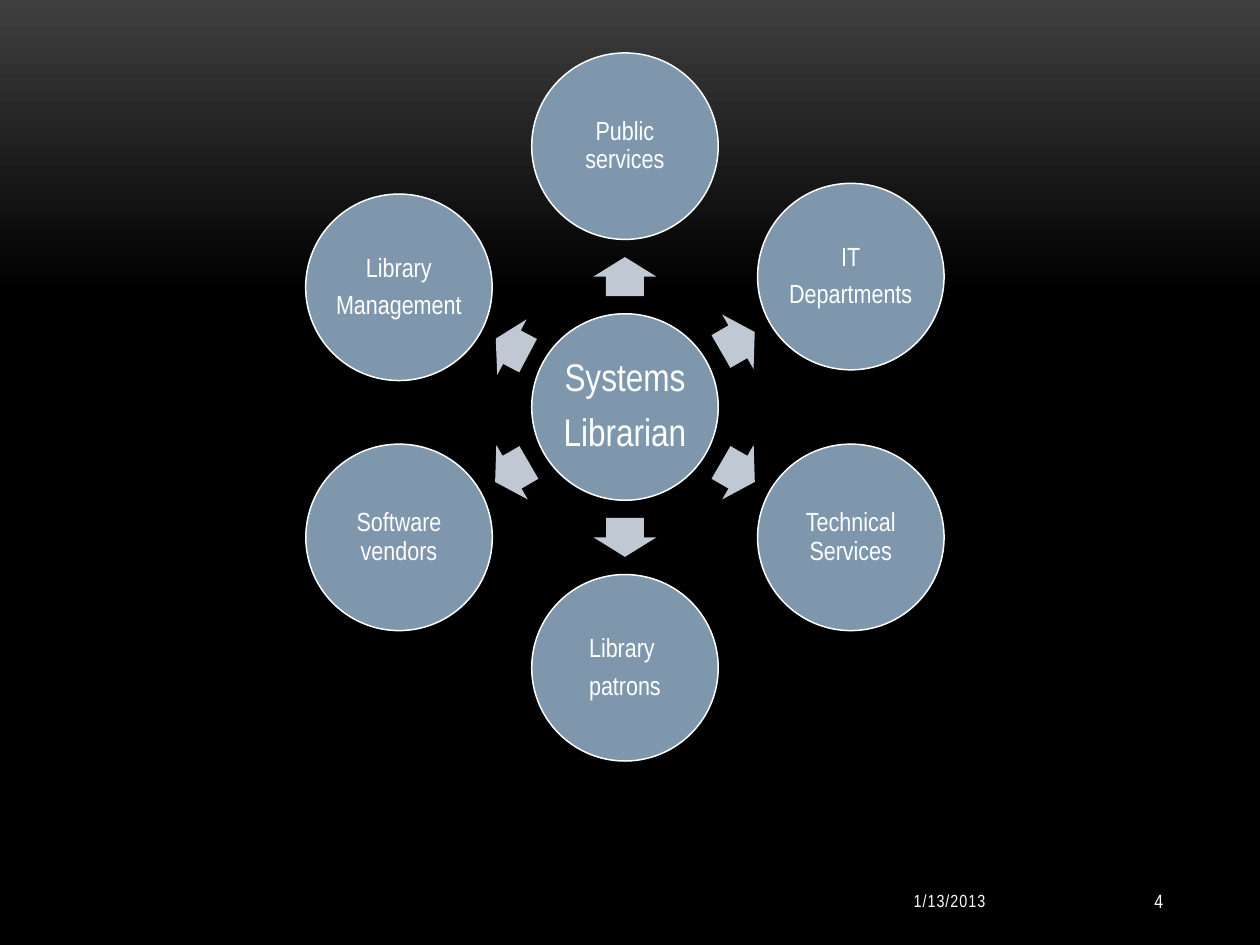
import math

import pptx
import pptx.dml.color
import pptx.enum.shapes
import pptx.enum.text
import pptx.util

Inches = pptx.util.Inches
Pt = pptx.util.Pt
RGBColor = pptx.dml.color.RGBColor
SHAPE = pptx.enum.shapes.MSO_SHAPE
ALIGN = pptx.enum.text.PP_ALIGN

WHITE = RGBColor(0xFF, 0xFF, 0xFF)
BLACK = RGBColor(0x00, 0x00, 0x00)
CHARCOAL = RGBColor(0x3F, 0x3F, 0x3F)
STEEL = RGBColor(0x7E, 0x97, 0xAD)
PALE_STEEL = RGBColor(0xC0, 0xC9, 0xD3)
FONT = "Arial Narrow"

CENTER_X, CENTER_Y = 4.96, 3.23
DIAMETER = 1.48
ARROW_HEIGHT = 0.5

# Lines of text, clockwise angle from the right, distance, arrow length
PARTNERS = [
    (["Public services"], 270, 2.07, 0.31),
    (["IT", "Departments"], 330, 2.07, 0.31),
    (["Technical Services"], 30, 2.07, 0.31),
    (["Library ", "patrons"], 90, 2.07, 0.31),
    (["Software vendors"], 150, 2.07, 0.31),
    (["Library", "Management"], 207.9, 2.03, 0.29),
]


def set_background(slide):
    fill = slide.background.fill
    fill.gradient()
    fill.gradient_angle = 270
    for stop, color, position in zip(fill.gradient_stops, (CHARCOAL, BLACK), (0, 0.31)):
        stop.color.rgb = color
        stop.position = position


def add_run(paragraph, text, size):
    run = paragraph.add_run()
    run.text = text
    run.font.name = FONT
    run.font.size = Pt(size)
    run.font.color.rgb = WHITE
    return run


def add_centered_shape(slide, kind, x, y, width, height, color):
    shape = slide.shapes.add_shape(
        kind, Inches(x - width / 2), Inches(y - height / 2), Inches(width), Inches(height)
    )
    shape.shadow.inherit = False
    shape.fill.solid()
    shape.fill.fore_color.rgb = color
    return shape


def add_circle(slide, x, y, lines, size, inset):
    circle = add_centered_shape(slide, SHAPE.OVAL, x, y, DIAMETER, DIAMETER, STEEL)
    circle.line.color.rgb = WHITE
    circle.line.width = Pt(0.85)
    frame = circle.text_frame
    frame.word_wrap = True
    frame.vertical_anchor = pptx.enum.text.MSO_ANCHOR.MIDDLE
    frame.margin_left = frame.margin_right = Inches(inset)
    frame.margin_top = frame.margin_bottom = Inches(inset)
    for index, line in enumerate(lines):
        paragraph = frame.add_paragraph() if index else frame.paragraphs[0]
        paragraph.alignment = ALIGN.CENTER
        paragraph.line_spacing = 0.9
        paragraph.space_after = Pt(0.35 * size)
        add_run(paragraph, line, size)


def add_arrow(slide, x, y, length, angle):
    arrow = add_centered_shape(slide, SHAPE.RIGHT_ARROW, x, y, length, ARROW_HEIGHT, PALE_STEEL)
    arrow.line.fill.background()
    arrow.adjustments[0] = 0.6
    arrow.adjustments[1] = 0.5
    arrow.rotation = angle


def add_footer(slide, left, width, text, size):
    box = slide.shapes.add_textbox(Inches(left), Inches(6.95), Inches(width), Inches(0.4))
    frame = box.text_frame
    frame.word_wrap = True
    frame.vertical_anchor = pptx.enum.text.MSO_ANCHOR.MIDDLE
    paragraph = frame.paragraphs[0]
    paragraph.alignment = ALIGN.RIGHT
    return add_run(paragraph, text, size)


def main():
    presentation = pptx.Presentation()
    presentation.slide_width = Inches(10)
    presentation.slide_height = Inches(7.5)
    slide = presentation.slides.add_slide(presentation.slide_layouts[6])
    set_background(slide)

    # Date and slide number
    date = add_footer(slide, 6.25, 1.67, "1/13/2013", 10)
    date._r.get_or_add_rPr().set("spc", "60")
    add_footer(slide, 8.25, 1.08, "4", 11)

    # Hub with arrows pointing out to its partners
    add_circle(slide, CENTER_X, CENTER_Y, ["Systems ", "Librarian"], 22, 0.03)
    for lines, angle, distance, arrow_length in PARTNERS:
        dx = distance * math.cos(math.radians(angle))
        dy = distance * math.sin(math.radians(angle))
        add_arrow(slide, CENTER_X + dx / 2, CENTER_Y + dy / 2, arrow_length, angle)
        add_circle(slide, CENTER_X + dx, CENTER_Y + dy, lines, 15, 0.02)

    presentation.save("out.pptx")


if __name__ == "__main__":
    main()
